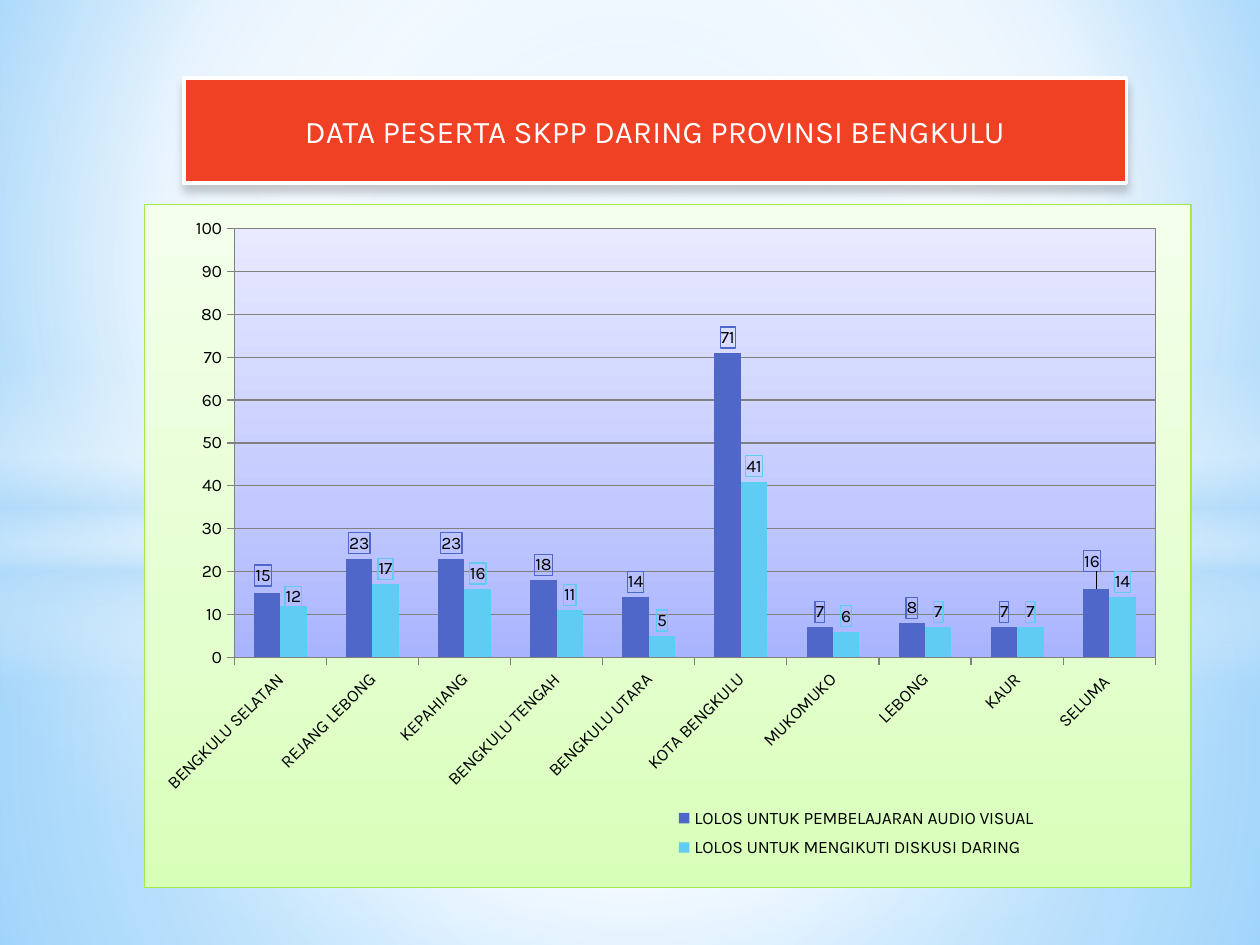
from dataclasses import dataclass

from pptx import Presentation
from pptx.chart.data import CategoryChartData
from pptx.dml.color import RGBColor
from pptx.enum import chart as ch, shapes, text
from pptx.oxml import parse_xml
from pptx.oxml.ns import nsdecls, qn
from pptx.util import Pt

FONT = "Karla"
HEX = {"white": "FFFFFF", "black": "000000", "grey": "808080", "red": "F14124",
       "pale": "B4DCFA", "green": "A4E94C", "blue": "4E67C8", "sky": "5ECCF3"}
W, P = HEX["white"], HEX["pale"]
NS = nsdecls("a", "c")
CENTRE = (50, 50, 50, 50)


@dataclass
class Glow:
    kind: shapes.MSO_SHAPE
    top: float
    high: float
    stops: list
    focus: tuple = None


@dataclass
class Bars:
    name: str
    vals: tuple
    hue: str
    moves: dict  # point index -> label shift as fractions of the chart


RECT, OVAL = shapes.MSO_SHAPE.RECTANGLE, shapes.MSO_SHAPE.OVAL
GLOWS = [
    Glow(RECT, 304.5, 235.5, [(0, W, 91), (37, W, 76), (100, P, 79)], CENTRE),
    Glow(RECT, 0, 304.5, [(0, W, 89), (48, W, 62), (100, P, 79)], CENTRE),
    Glow(RECT, 209, 180, [(0, W, 0), (29, W, 30), (45, P, 40), (55, W, 26),
                          (65, P, 60), (100, W, 0)]),
    Glow(OVAL, 126, 402, [(0, W, 100), (54, W, 0)], CENTRE),
]
BACK = [(0, "9ED5FF", 100), (60, W, 100), (100, "5BB9FF", 100)]
PANEL = [(0, "D8FFB8", 100), (35, "E3FFCD", 100), (100, "F4FFEC", 100)]
PLOT = [(0, "A9B4FF", 100), (35, "C2C9FF", 100), (100, "E8EAFF", 100)]
CATS = ["BENGKULU SELATAN", "REJANG LEBONG", "KEPAHIANG", "BENGKULU TENGAH",
        "BENGKULU UTARA", "KOTA BENGKULU", "MUKOMUKO", "LEBONG", "KAUR", "SELUMA "]
SERIES = [
    Bars("LOLOS UNTUK PEMBELAJARAN AUDIO VISUAL",
         (15, 23, 23, 18, 14, 71, 7, 8, 7, 16), "blue",
         {0: (-0.004, -0.003), 9: (-0.004, -0.018)}),
    Bars("LOLOS UNTUK MENGIKUTI DISKUSI DARING",
         (12, 17, 16, 11, 5, 41, 6, 7, 7, 14), "sky", {0: (0, 0.009)}),
]


def rgb(name: str) -> RGBColor:
    return RGBColor.from_string(HEX[name])


def grad(stops: list, focus: tuple = None, angle: int = 90) -> str:
    """Gradient XML: radial when a focus is given, otherwise linear."""
    marks = "".join(
        f'<a:gs pos="{at * 1000}"><a:srgbClr val="{hue}">'
        f'<a:alpha val="{alpha * 1000}"/></a:srgbClr></a:gs>'
        for at, hue, alpha in stops)
    if focus:
        l, t, r, b = (n * 1000 for n in focus)
        way = (f'<a:path path="circle"><a:fillToRect l="{l}" t="{t}" '
               f'r="{r}" b="{b}"/></a:path>')
    else:
        way = f'<a:lin ang="{angle * 60000}" scaled="0"/>'
    return f'<a:gradFill {NS} rotWithShape="1"><a:gsLst>{marks}</a:gsLst>{way}</a:gradFill>'


def swap(fill, holder, xml: str) -> None:
    """Replace the holder's fill by the gradient."""
    fill.solid()
    old = next(holder.iter(qn("a:solidFill")))
    old.getparent().replace(old, parse_xml(xml))


def style(hue: str, fill: str = "<a:noFill/>"):
    return parse_xml(
        f'<c:spPr {NS}>{fill}<a:ln w="9525"><a:solidFill>'
        f'<a:srgbClr val="{HEX[hue]}"/></a:solidFill></a:ln></c:spPr>')


def layout(x: float, y: float, size: tuple = None, inner: bool = False):
    """Manual chart layout; without a size it is a shift."""
    rows = [("layoutTarget", "inner")] if inner else []
    if size:
        rows += [("xMode", "edge"), ("yMode", "edge")]
    rows += [("x", x), ("y", y)]
    if size:
        rows += zip("wh", size)
    body = "".join(f'<c:{tag} val="{val}"/>' for tag, val in rows)
    return parse_xml(f"<c:layout {NS}><c:manualLayout>{body}</c:manualLayout></c:layout>")


def draw_glow(slide, glow: Glow) -> None:
    box = slide.shapes.add_shape(glow.kind, 0, Pt(glow.top), Pt(720), Pt(glow.high))
    box.shadow.inherit = False
    box.line.fill.background()
    swap(box.fill, box._element.spPr, grad(glow.stops, glow.focus))


def dress_bars(ser, bars: Bars) -> None:
    ser.format.fill.solid()
    ser.format.fill.fore_color.rgb = rgb(bars.hue)
    ser.invert_if_negative = False
    end = ch.XL_LABEL_POSITION.OUTSIDE_END
    ser.data_labels.show_value = True
    ser.data_labels.position = end
    for idx, move in bars.moves.items():
        ser.points[idx].data_label.position = end
    for pos in list(ser._element.iter(qn("c:dLblPos"))):
        idx = pos.getparent().find(qn("c:idx"))
        if idx is not None:
            pos.addprevious(layout(*bars.moves[int(idx.get("val"))]))
        pos.addprevious(style(bars.hue))


def draw_chart(slide) -> None:
    data = CategoryChartData()
    data.categories = CATS
    for bars in SERIES:
        data.add_series(bars.name, bars.vals)
    chart = slide.shapes.add_chart(
        ch.XL_CHART_TYPE.COLUMN_CLUSTERED, Pt(82), Pt(116.6), Pt(599), Pt(391), data).chart
    chart.has_title = False
    chart.font.size, chart.font.name = Pt(10), FONT
    chart.font.color.rgb = rgb("black")
    plot = chart.plots[0]
    plot.gap_width, plot.overlap, plot.vary_by_categories = 150, 0, False
    for ser, bars in zip(plot.series, SERIES):
        dress_bars(ser, bars)

    val, cat = chart.value_axis, chart.category_axis
    val.minimum_scale, val.maximum_scale, val.major_unit = 0, 100, 10
    val.has_major_gridlines = True
    for line in (val.format.line, cat.format.line, val.major_gridlines.format.line):
        line.color.rgb, line.width = rgb("grey"), Pt(0.75)
    for axis in (val, cat):
        axis.major_tick_mark = ch.XL_TICK_MARK.OUTSIDE
        axis.tick_labels.font.size = Pt(10)
    cat._element.find(qn("c:txPr")).find(qn("a:bodyPr")).set("rot", "-2700000")

    chart.has_legend = True
    key = chart.legend
    key.position, key.include_in_layout = ch.XL_LEGEND_POSITION.RIGHT, False
    for old in key._element.findall(qn("c:layout")):
        key._element.remove(old)
    key._element.find(qn("c:legendPos")).addnext(layout(0.5, 0.87, (0.36, 0.1)))

    root = chart._chartSpace
    root.chart.addnext(style("green", grad(PANEL, angle=270)))
    area = root.chart.plotArea
    for old in area.findall(qn("c:layout")):
        area.remove(old)
    area.insert(0, layout(0.086, 0.035, (0.88, 0.628), True))
    area.append(style("grey", grad(PLOT, angle=270)))


def draw_title(slide) -> None:
    box = slide.shapes.title
    box.left, box.top, box.width, box.height = Pt(105), Pt(60), Pt(538.6), Pt(29)
    box.fill.solid()
    box.fill.fore_color.rgb = rgb("red")
    box.line.color.rgb, box.line.width = rgb("white"), Pt(2)
    box._element.spPr.append(parse_xml(
        f'<a:effectLst {NS}><a:outerShdw blurRad="{Pt(5)}" dist="{Pt(4)}" dir="5400000" '
        f'rotWithShape="0"><a:srgbClr val="{HEX["black"]}"><a:alpha val="20000"/>'
        '</a:srgbClr></a:outerShdw></a:effectLst>'))
    frame = box.text_frame
    frame.text = "DATA PESERTA SKPP DARING PROVINSI BENGKULU"
    frame.word_wrap = True
    frame.auto_size = text.MSO_AUTO_SIZE.SHAPE_TO_FIT_TEXT
    frame.vertical_anchor = text.MSO_ANCHOR.MIDDLE
    frame.paragraphs[0].alignment = text.PP_ALIGN.CENTER
    font = frame.paragraphs[0].runs[0].font
    font.size, font.name, font.color.rgb = Pt(18), FONT, rgb("white")
    slide.shapes._spTree.append(box._element)  # bring to front


def main() -> None:
    deck = Presentation()
    deck.slide_width, deck.slide_height = Pt(720), Pt(540)
    slide = deck.slides.add_slide(deck.slide_layouts[5])
    swap(slide.background.fill, slide._element.cSld, grad(BACK, (20, 10, 20, 60)))
    for glow in GLOWS:
        draw_glow(slide, glow)
    draw_chart(slide)
    draw_title(slide)
    deck.save("out.pptx")


if __name__ == "__main__":
    main()
